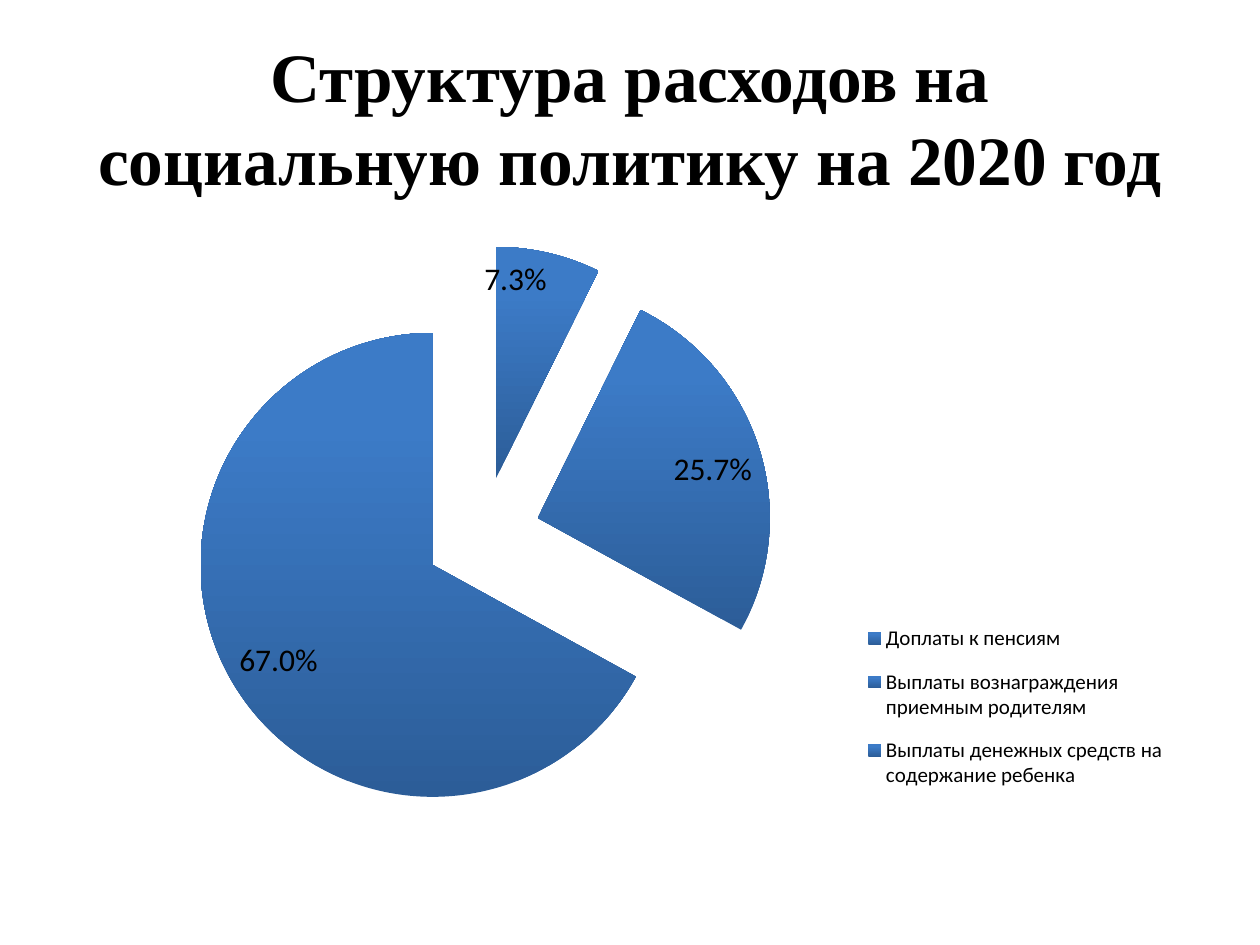
from lxml.etree import SubElement
from pptx import Presentation
from pptx.chart.data import CategoryChartData
from pptx.dml.color import RGBColor
from pptx.enum.chart import XL_CHART_TYPE as ChartType
from pptx.enum.chart import XL_LABEL_POSITION as LabelPosition
from pptx.enum.chart import XL_LEGEND_POSITION as LegendPosition
from pptx.enum.text import MSO_ANCHOR as Anchor
from pptx.enum.text import PP_ALIGN as Align
from pptx.oxml.ns import qn
from pptx.util import Inches, Pt

COLORS = {"text": "000000", "slice_dark": "2C5D98", "slice_light": "3C7BC7"}
SPENDING = {
    "Доплаты к пенсиям": 7.3,
    "Выплаты вознаграждения приемным родителям": 25.7,
    "Выплаты денежных средств на содержание ребенка": 67,
}


def format_font(font, size, name="Calibri", bold=False, color="text"):
    """Set the typeface, size, weight and colour of a font."""
    font.name, font.size, font.bold = name, Pt(size), bold
    font.color.rgb = RGBColor.from_string(COLORS[color])


def write_text(frame, text, align=Align.CENTER, anchor=Anchor.MIDDLE, **style):
    """Write one formatted paragraph into a text frame."""
    frame.word_wrap, frame.vertical_anchor = True, anchor
    para = frame.paragraphs[0]
    para.alignment = align
    span = para.add_run()
    span.text = text
    format_font(span.font, **style)


def set_layout(parent, index, inner=False, **fractions):
    """Give a chart part a manual layout in fractions of the chart."""
    for old in parent.findall(qn("c:layout")):
        parent.remove(old)
    layout = SubElement(parent, qn("c:layout"))
    parent.insert(index, layout)
    manual = SubElement(layout, qn("c:manualLayout"))
    settings = {"layoutTarget": "inner"} if inner else {}
    settings |= {"xMode": "edge", "yMode": "edge"} | fractions
    for tag, value in settings.items():
        SubElement(manual, qn(f"c:{tag}")).set("val", str(value))


def fill_slices(series):
    """Pull the slices apart and shade each from dark to light upwards."""
    explosion = SubElement(series._element, qn("c:explosion"))
    explosion.set("val", "25")
    series._element.find(qn("c:tx")).addnext(explosion)
    for index in range(len(SPENDING)):
        fill = series.points[index].format.fill
        fill.gradient()
        fill.gradient_angle = 90
        dark, light = fill.gradient_stops
        dark.color.rgb = RGBColor.from_string(COLORS["slice_dark"])
        light.color.rgb = RGBColor.from_string(COLORS["slice_light"])
        dark.position, light.position = 0, 0.8


def add_title(page, box):
    """Place the slide title in the given box."""
    title = page.shapes.title
    title.left, title.top, title.width, title.height = box
    write_text(title.text_frame, "Структура расходов на социальную политику на 2020 год",
               size=39.6, name="Times New Roman", bold=True)


def add_spending_pie(page, box):
    """Place the exploded pie with its percentages and legend in the given box."""
    data = CategoryChartData()
    data.categories = SPENDING.keys()
    data.add_series("Series 1", SPENDING.values())
    chart = page.shapes.add_chart(ChartType.PIE, *box, data).chart
    chart.has_title = False
    format_font(chart.font, 18)

    plot = chart.plots[0]
    plot.vary_by_categories = True
    fill_slices(plot.series[0])
    plot.has_data_labels = True
    labels = plot.data_labels
    labels.show_percentage, labels.show_value = True, False
    labels.number_format, labels.number_format_is_linked = "0.0%", False
    labels.position = LabelPosition.INSIDE_END
    format_font(labels.font, 18)
    set_layout(chart._chartSpace.chart.plotArea, 0, inner=True, x=0.02, y=0.04, w=0.7, h=0.93)

    chart.has_legend = True
    legend = chart.legend
    legend.position, legend.include_in_layout = LegendPosition.RIGHT, False
    format_font(legend.font, 12)
    set_layout(legend._element, 1, x=0.69, y=0.62, w=0.3, h=0.32)


def main():
    """Build and save the slide."""
    deck = Presentation()
    deck.slide_width, deck.slide_height = Inches(10), Inches(7.5)
    page = deck.slides.add_slide(deck.slide_layouts[5])
    left, width = Inches(0.5), Inches(9)
    add_title(page, (left, Inches(0.3), width, Inches(1.25)))
    add_spending_pie(page, (left, Inches(1.75), width, Inches(4.95)))
    deck.save("out.pptx")


if __name__ == "__main__":
    main()
